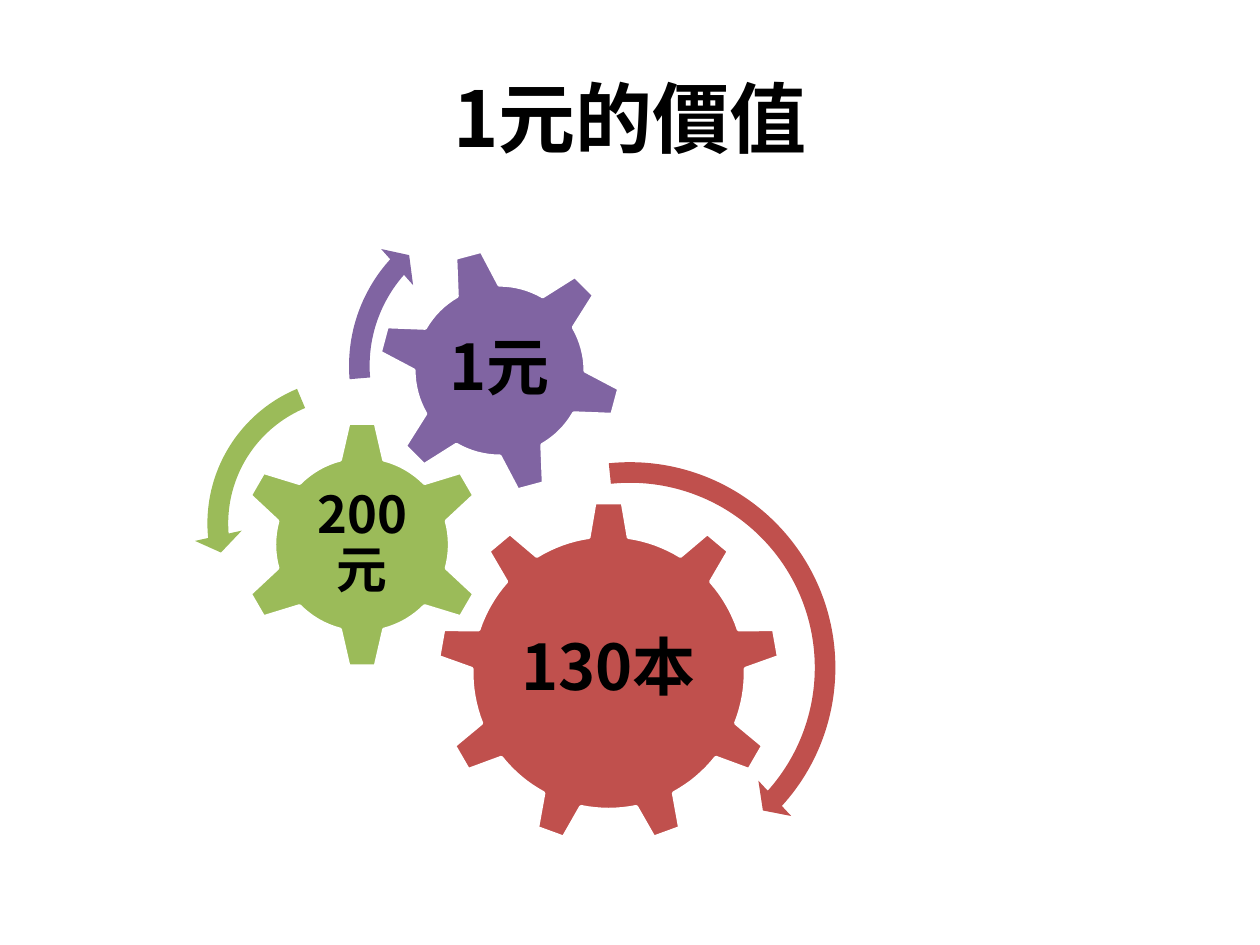
import math
from dataclasses import dataclass

import lxml.etree
import pptx
import pptx.dml.color
import pptx.enum.shapes
import pptx.enum.text
import pptx.oxml.ns
import pptx.util

Cm, Pt = pptx.util.Cm, pptx.util.Pt
RGB = pptx.dml.color.RGBColor.from_string
SHAPE = pptx.enum.shapes.MSO_SHAPE


@dataclass(frozen=True)
class Theme:
    font: str = "Noto Sans CJK SC"
    text: str = "000000"
    outline: str = "FFFFFF"
    books: str = "C0504D"
    fund: str = "9BBB59"
    dollar: str = "8064A2"
    title_size: int = 44
    gear_size: int = 36
    small_gear_size: int = 29


@dataclass(frozen=True)
class Box:
    """Position and size in centimetres."""
    left: float
    top: float
    width: float
    height: float

    def lengths(self):
        return Cm(self.left), Cm(self.top), Cm(self.width), Cm(self.height)


@dataclass(frozen=True)
class Cog:
    """Tooth layout of a gear, in centimetres and degrees."""
    teeth: int
    first_angle: float
    root_radius: float
    root_half: float
    tip_half: float


THEME = Theme()


def write(frame, text, size):
    frame.text = text
    frame.vertical_anchor = pptx.enum.text.MSO_ANCHOR.MIDDLE
    paragraph = frame.paragraphs[0]
    paragraph.alignment = pptx.enum.text.PP_ALIGN.CENTER
    font = paragraph.runs[0].font
    font.name, font.size, font.bold = THEME.font, Pt(size), True
    font.color.rgb = RGB(THEME.text)
    east_asian = lxml.etree.Element(pptx.oxml.ns.qn("a:ea"), typeface=THEME.font)
    font._element.find(pptx.oxml.ns.qn("a:latin")).addnext(east_asian)


def paint(shape, colour):
    shape.shadow.inherit = False
    shape.fill.solid()
    shape.fill.fore_color.rgb = RGB(colour)


def add_title(slide, box, text):
    title = slide.shapes.title
    title.left, title.top, title.width, title.height = box.lengths()
    write(title.text_frame, text, THEME.title_size)


def gear_outline(box, cog, arc_steps=8):
    """Points of each tooth, followed by the body arc up to the next tooth."""
    radius = box.width / 2
    center_x, center_y = box.left + radius, box.top + radius
    pitch = 2 * math.pi / cog.teeth
    root_angle = math.atan2(cog.root_half, cog.root_radius)
    body_radius = math.hypot(cog.root_half, cog.root_radius)
    tip_angle = math.atan2(cog.tip_half, radius)
    tip_radius = math.hypot(cog.tip_half, radius)
    points = []
    for tooth in range(cog.teeth):
        middle = math.radians(cog.first_angle) + tooth * pitch
        polar = [(tip_radius, middle - tip_angle), (tip_radius, middle + tip_angle)]
        gap = pitch - 2 * root_angle
        polar += [(body_radius, middle + root_angle + gap * step / arc_steps)
                  for step in range(arc_steps + 1)]
        points += [(Cm(center_x + r * math.cos(a)), Cm(center_y + r * math.sin(a)))
                   for r, a in polar]
    return points


def add_gear(slide, box, cog, colour, text, size, text_width):
    start, *rest = gear_outline(box, cog)
    builder = slide.shapes.build_freeform(*start)
    builder.add_line_segments(rest, close=True)
    gear = builder.convert_to_shape()
    paint(gear, colour)
    gear.line.color.rgb = RGB(THEME.outline)
    gear.line.width = Pt(2)
    frame = gear.text_frame
    frame.word_wrap = True
    frame.margin_left = frame.margin_right = (gear.width - Cm(text_width)) // 2
    frame.margin_top = frame.margin_bottom = 0
    write(frame, text, size)
    frame.paragraphs[0].line_spacing = 0.9


def add_turn(slide, box, kind, colour, adjustments):
    turn = slide.shapes.add_shape(kind, *box.lengths())
    paint(turn, colour)
    turn.line.fill.background()
    for index, value in enumerate(adjustments):
        turn.adjustments[index] = value


def main():
    deck = pptx.Presentation()
    deck.slide_width, deck.slide_height = Cm(25.4), Cm(19.05)
    slide = deck.slides.add_slide(deck.slide_layouts[5])
    add_title(slide, Box(1.27, 0.76, 22.86, 3.18), "1元的價值")

    add_gear(slide, Box(8.84, 10.13, 6.86, 6.86), Cog(9, -90, 2.73, 0.4, 0.28),
             THEME.books, "130本", THEME.gear_size, 3.86)
    add_gear(slide, Box(4.85, 8.53, 4.9, 4.9), Cog(6, -90, 1.71, 0.44, 0.27),
             THEME.fund, "200元", THEME.small_gear_size, 2.29)
    add_gear(slide, Box(7.65, 5.05, 4.84, 4.84), Cog(6, -45, 1.67, 0.44, 0.27),
             THEME.dollar, "1元", THEME.gear_size, 2.54)

    add_turn(slide, Box(8.28, 9.04, 8.84, 8.84), SHAPE.CIRCULAR_ARROW,
             THEME.books, (0.047, 2.99, 25.24, 158.45, 0.055))
    add_turn(slide, Box(3.91, 7.34, 6.43, 6.43), SHAPE.LEFT_CIRCULAR_ARROW,
             THEME.fund, (0.065, 4.3, 104.89, 148.38, 0.075))
    add_turn(slide, Box(6.76, 3.91, 6.93, 6.93), SHAPE.CIRCULAR_ARROW,
             THEME.dollar, (0.06, 3.94, 133.14, 105.08, 0.07))
    deck.save("out.pptx")


if __name__ == "__main__":
    main()
